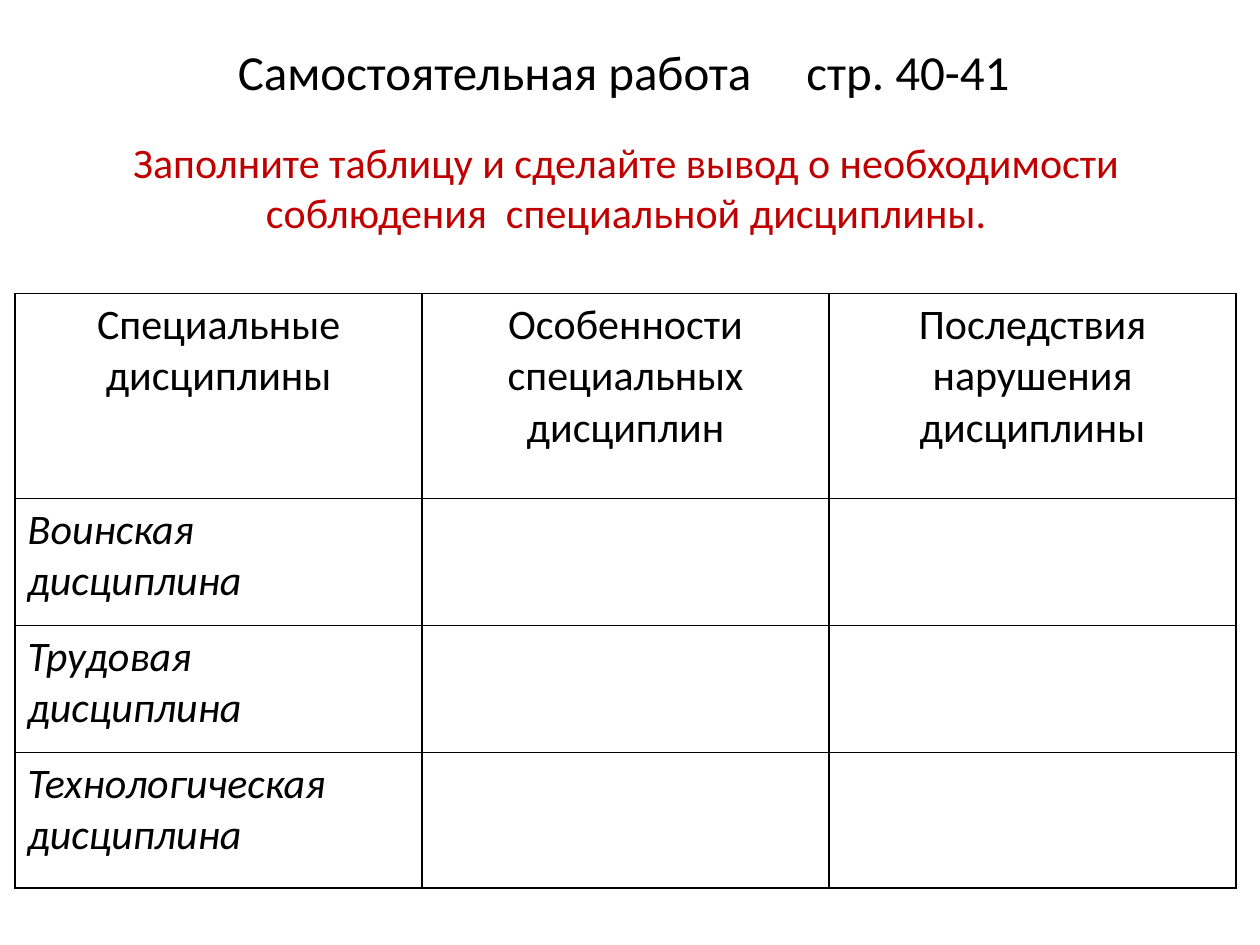
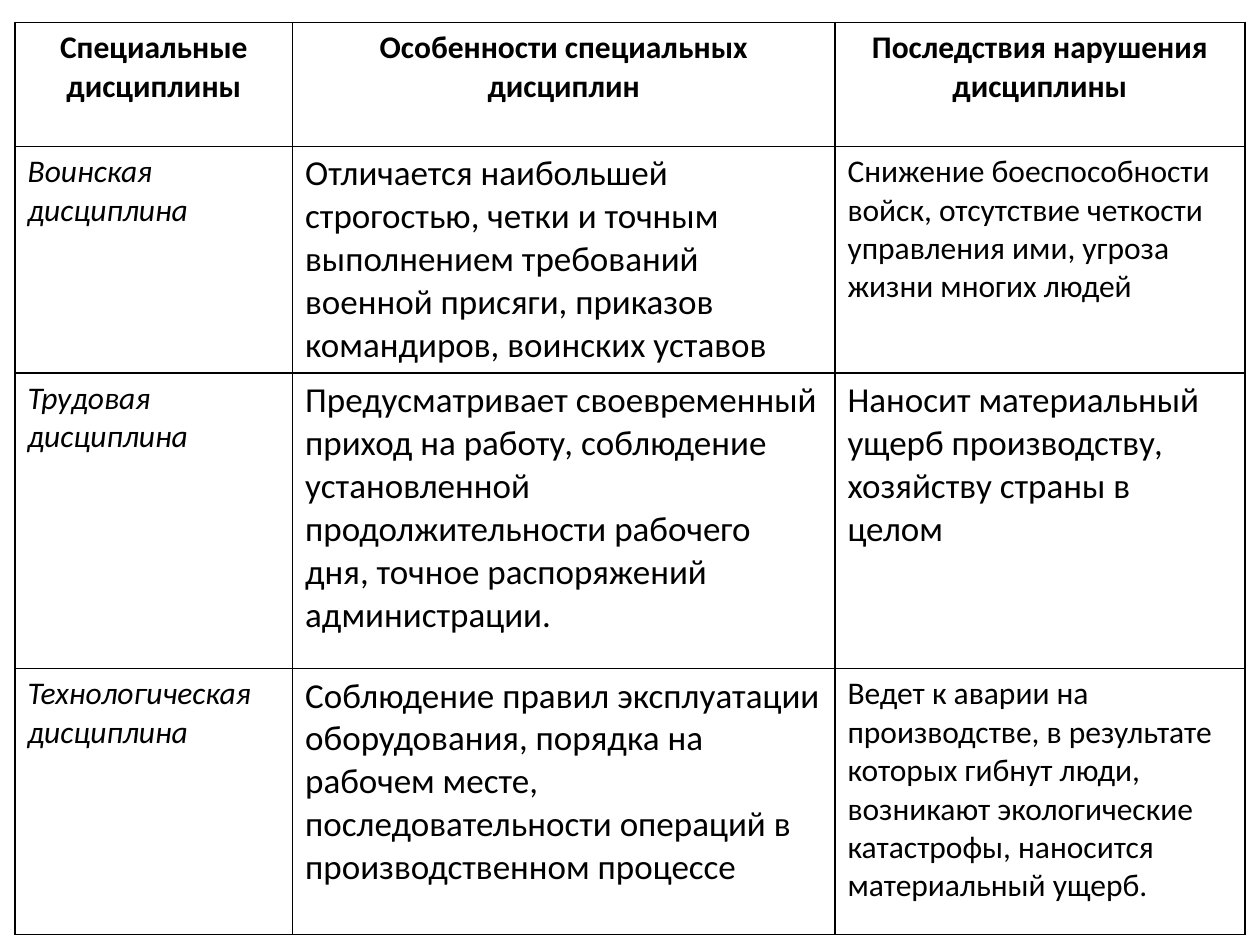
import dataclasses

import pptx
import pptx.dml.color
import pptx.enum.text
import pptx.oxml.ns
import pptx.util
from lxml import etree

ALIGN = pptx.enum.text.PP_ALIGN
ANCHOR = pptx.enum.text.MSO_ANCHOR


@dataclasses.dataclass(frozen=True)
class Theme:
    font: str = "Calibri"
    ink: str = "000000"
    accent: str = "C00000"
    title: int = 28
    large: int = 24
    medium: int = 20
    small: int = 18
    border: float = 1


THEME = Theme()
WIDTH, HEIGHT = 10, 7.5  # slide size, inches

HEADERS = ["Специальные дисциплины", "Особенности специальных дисциплин",
           "Последствия нарушения дисциплины"]
DISCIPLINES = ["Воинская дисциплина", "Трудовая дисциплина", "Технологическая дисциплина"]
FEATURES = [
    "Отличается наибольшей строгостью, четки и точным выполнением требований "
    "военной присяги, приказов командиров, воинских уставов",
    "Предусматривает своевременный приход на работу, соблюдение установленной "
    "продолжительности рабочего дня, точное распоряжений администрации.",
    "Соблюдение правил эксплуатации оборудования, порядка на рабочем месте, "
    "последовательности операций в производственном процессе",
]
# Each consequence with its type size
CONSEQUENCES = [
    ("Снижение боеспособности войск, отсутствие четкости управления ими, "
     "угроза жизни многих людей", THEME.small),
    ("Наносит материальный ущерб производству, хозяйству страны в целом", THEME.medium),
    ("Ведет к аварии на производстве, в результате которых гибнут люди, возникают "
     "экологические катастрофы, наносится материальный ущерб.", THEME.small),
]


def inches(box):
    return [pptx.util.Inches(n) for n in box]


def style(p, size, color=THEME.ink, align=ALIGN.LEFT, bold=False, italic=False):
    p.alignment = align
    p.space_before = pptx.util.Pt(0)
    p.font.name = THEME.font
    p.font.size = pptx.util.Pt(size)
    p.font.bold, p.font.italic = bold, italic
    p.font.color.rgb = pptx.dml.color.RGBColor.from_string(color)


def place_text(sp, box, anchor, size, color, parts):
    """Fill a placeholder with centred text; a stretched space joins the parts."""
    sp.left, sp.top, sp.width, sp.height = inches(box)
    tf = sp.text_frame
    tf.word_wrap = True
    tf.auto_size = pptx.enum.text.MSO_AUTO_SIZE.NONE
    tf.vertical_anchor = anchor
    p = tf.paragraphs[0]
    style(p, size, color, ALIGN.CENTER)
    for i, part in enumerate(parts):
        if i:
            gap = p.add_run()
            gap.text = " "
            gap.font.size = pptx.util.Pt(size)
            gap.font._element.set("spc", str(size * 90))
        p.add_run().text = part


def outline(cell):
    """Draw all four borders, then clear the fill."""
    tcPr = cell._tc.get_or_add_tcPr()
    for side in ("lnL", "lnR", "lnT", "lnB"):
        ln = etree.SubElement(tcPr, pptx.oxml.ns.qn("a:" + side),
                              w=str(pptx.util.Pt(THEME.border)))
        fill = etree.SubElement(ln, pptx.oxml.ns.qn("a:solidFill"))
        etree.SubElement(fill, pptx.oxml.ns.qn("a:srgbClr"), val=THEME.ink)
    cell.fill.background()


def discipline_table(s, box, col_shares, row_shares, size, bold_header, answers=()):
    """Table of disciplines; answers holds (feature, consequence) per row."""
    left, top, width, height = box
    table = s.shapes.add_table(len(row_shares), len(col_shares), *inches(box)).table
    table.first_row = table.horz_banding = False
    for col, share in zip(table.columns, col_shares):
        col.width = pptx.util.Inches(width * share / sum(col_shares))
    for row, share in zip(table.rows, row_shares):
        row.height = pptx.util.Inches(height * share / sum(row_shares))
    for cell in table.iter_cells():
        outline(cell)

    def write(row, col, text, size, **look):
        cell = table.cell(row, col)
        cell.text = text
        style(cell.text_frame.paragraphs[0], size, **look)

    # Header row
    for col, text in enumerate(HEADERS):
        write(0, col, text, size, align=ALIGN.CENTER, bold=bold_header)
    # Names of the disciplines
    for row, text in enumerate(DISCIPLINES, 1):
        write(row, 0, text, size, italic=True)
    # Answers
    for row, (feature, (consequence, answer_size)) in enumerate(answers, 1):
        write(row, 1, feature, THEME.medium)
        write(row, 2, consequence, answer_size)


def task_slide(prs):
    s = prs.slides.add_slide(prs.slide_layouts[0])
    place_text(s.shapes.title, (WIDTH * 0.02, HEIGHT * 0.03, WIDTH * 0.95, HEIGHT * 0.09),
               ANCHOR.MIDDLE, THEME.title, THEME.ink, ["Самостоятельная работа", "стр. 40-41"])
    discipline_table(s, (0.12, 2.33, 9.69, 4.72), (1, 1, 1), (1.63, 1.01, 1.01, 1.08),
                     THEME.large, bold_header=False)
    place_text(s.placeholders[1], (0.07, 1.03, 9.8, 0.91), ANCHOR.TOP, THEME.large, THEME.accent,
               ["Заполните таблицу и сделайте вывод о необходимости "
                "соблюдения  специальной дисциплины."])


def answers_slide(prs):
    s = prs.slides.add_slide(prs.slide_layouts[6])
    discipline_table(s, (0.12, 0.18, 9.76, 7.18), (2.2, 4.3, 3.25), (0.98, 1.74, 2.34, 2.11),
                     THEME.small, bold_header=True, answers=zip(FEATURES, CONSEQUENCES))


def main():
    prs = pptx.Presentation()
    prs.slide_width, prs.slide_height = inches((WIDTH, HEIGHT))
    task_slide(prs)
    answers_slide(prs)
    prs.save("out.pptx")


if __name__ == "__main__":
    main()
